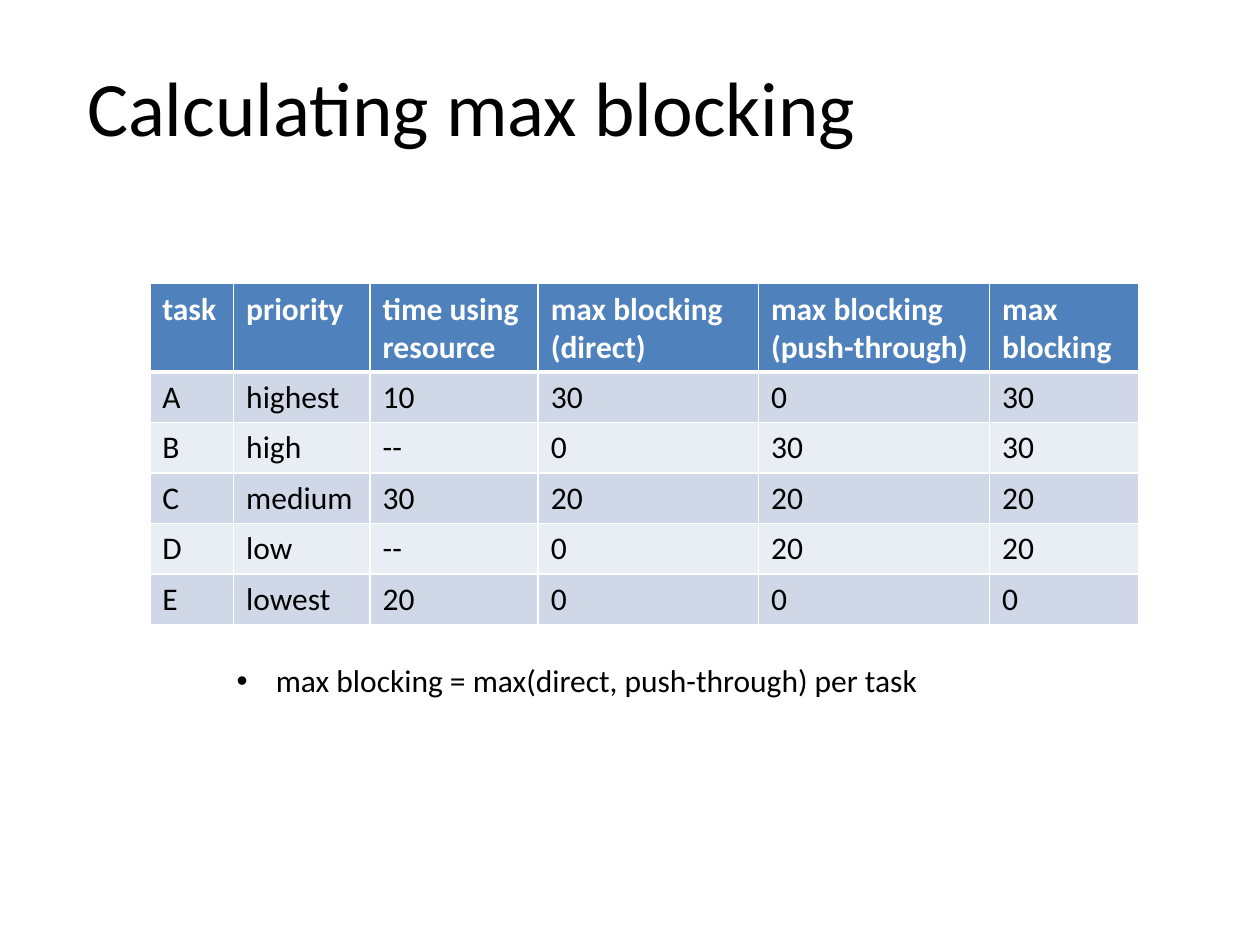
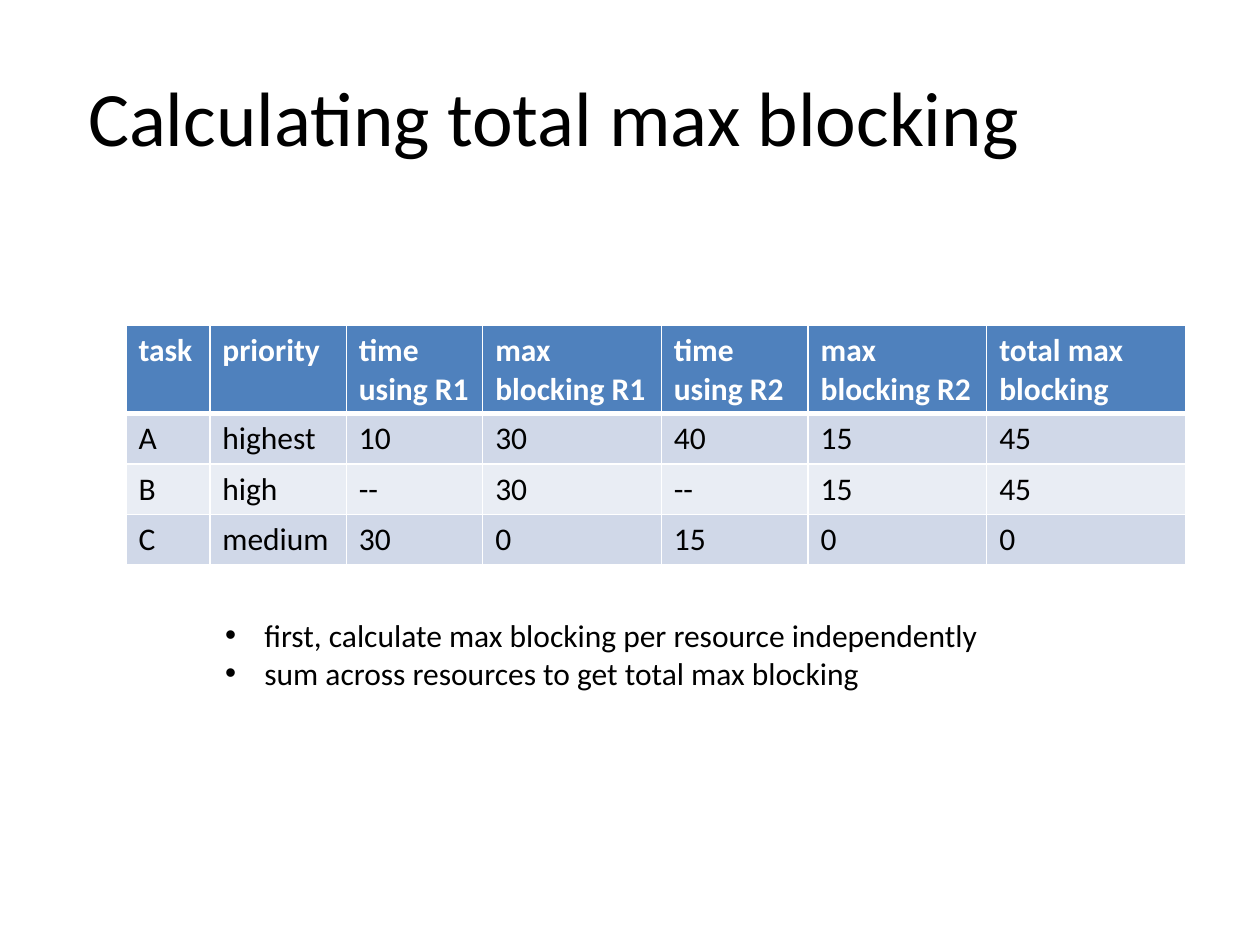
import pptx
import pptx.dml.color
import pptx.enum.text
import pptx.oxml.ns
import pptx.util
from lxml import etree

Cm = pptx.util.Cm
Pt = pptx.util.Pt
qn = pptx.oxml.ns.qn

FONT = "Calibri"
TITLE_SIZE = 44
BODY_SIZE = 18
HEADER_HEIGHT = 1.75
ROW_HEIGHT = 1.01
BULLET_INDENT = 0.79
COLORS = {
    "text": "000000",
    "header": "4F81BD",
    "header_text": "FFFFFF",
    "odd_row": "D0D8E8",
    "even_row": "E9EDF4",
    "border": "FFFFFF",
}

SLIDES = [
    {
        "title": "Calculating max blocking",
        "title_box": (1.5, 1.07, 16.18, 2.13),
        "table_pos": (3.02, 5.72),
        "col_widths": [1.69, 2.75, 3.39, 4.44, 4.66, 3.0],
        "rows": [
            ["task", "priority", "time using resource", "max blocking (direct)",
             "max blocking (push-through)", "max blocking"],
            ["A", "highest", "10", "30", "0", "30"],
            ["B", "high", "--", "0", "30", "30"],
            ["C", "medium", "30", "20", "20", "20"],
            ["D", "low", "--", "0", "20", "20"],
            ["E", "lowest", "20", "0", "0", "0"],
        ],
        "notes_box": (4.52, 13.21, 15.37, 1.02),
        "bullets": ["max blocking = max(direct, push-through) per task"],
    },
    {
        "title": "Calculating total max blocking",
        "title_box": (1.52, 1.27, 19.51, 2.13),
        "table_pos": (2.54, 6.56),
        "col_widths": [1.69, 2.75, 2.75, 3.6, 2.96, 3.6, 4.02],
        "rows": [
            ["task", "priority", "time using R1", "max blocking R1",
             "time using R2", "max blocking R2", "total max blocking"],
            ["A", "highest", "10", "30", "40", "15", "45"],
            ["B", "high", "--", "30", "--", "15", "45"],
            ["C", "medium", "30", "0", "15", "0", "0"],
        ],
        "notes_box": (4.29, 12.29, 16.71, 1.8),
        "bullets": ["first, calculate max blocking per resource independently",
                    "sum across resources to get total max blocking"],
    },
]


def rgb(name):
    return pptx.dml.color.RGBColor.from_string(COLORS[name])


def format_runs(tf, size, color="text", bold=False):
    for p in tf.paragraphs:
        for r in p.runs:
            r.font.name = FONT
            r.font.size = Pt(size)
            r.font.bold = bold
            r.font.color.rgb = rgb(color)


def add_title(s, text, box):
    sp = s.shapes.title
    sp.left, sp.top, sp.width, sp.height = map(Cm, box)
    tf = sp.text_frame
    tf.text = text
    tf.word_wrap = False
    tf.auto_size = pptx.enum.text.MSO_AUTO_SIZE.SHAPE_TO_FIT_TEXT
    tf.vertical_anchor = pptx.enum.text.MSO_ANCHOR.TOP
    tf.paragraphs[0].alignment = pptx.enum.text.PP_ALIGN.LEFT
    format_runs(tf, TITLE_SIZE)


def add_border(cell, side, width):
    ln = etree.SubElement(cell._tc.get_or_add_tcPr(), qn(f"a:ln{side}"), w=str(Pt(width)))
    fill = etree.SubElement(ln, qn("a:solidFill"))
    etree.SubElement(fill, qn("a:srgbClr"), val=COLORS["border"])


def format_cell(cell, row):
    is_header = row == 0
    widths = {"L": 1, "R": 1, "T": 3 if row == 1 else 1, "B": 3 if is_header else 1}
    for side, width in widths.items():
        add_border(cell, side, width)
    cell.fill.solid()
    fill = "header" if is_header else "odd_row" if row % 2 else "even_row"
    cell.fill.fore_color.rgb = rgb(fill)
    format_runs(cell.text_frame, BODY_SIZE, "header_text" if is_header else "text", is_header)


def add_blocking_table(s, pos, col_widths, rows):
    left, top = pos
    heights = [HEADER_HEIGHT] + [ROW_HEIGHT] * (len(rows) - 1)
    table = s.shapes.add_table(len(rows), len(col_widths), Cm(left), Cm(top),
                               Cm(sum(col_widths)), Cm(sum(heights))).table
    for column, width in zip(table.columns, col_widths):
        column.width = Cm(width)
    for i, values in enumerate(rows):
        table.rows[i].height = Cm(heights[i])
        for j, value in enumerate(values):
            cell = table.cell(i, j)
            cell.text_frame.text = value
            format_cell(cell, i)


def add_bullets(s, lines, box):
    tf = s.shapes.add_textbox(*map(Cm, box)).text_frame
    tf.word_wrap = True
    tf.auto_size = pptx.enum.text.MSO_AUTO_SIZE.SHAPE_TO_FIT_TEXT
    tf.text = "\n".join(lines)
    for p in tf.paragraphs:
        pPr = p._p.get_or_add_pPr()
        pPr.set("marL", str(Cm(BULLET_INDENT)))
        pPr.set("indent", str(-Cm(BULLET_INDENT)))
        etree.SubElement(pPr, qn("a:buFont"), typeface="Arial")
        etree.SubElement(pPr, qn("a:buChar"), char="•")
    format_runs(tf, BODY_SIZE)


def add_blocking_slide(prs, content):
    s = prs.slides.add_slide(prs.slide_layouts[5])
    add_title(s, content["title"], content["title_box"])
    add_blocking_table(s, content["table_pos"], content["col_widths"], content["rows"])
    add_bullets(s, content["bullets"], content["notes_box"])


def main():
    prs = pptx.Presentation()
    prs.slide_width, prs.slide_height = Cm(25.4), Cm(19.05)
    for content in SLIDES:
        add_blocking_slide(prs, content)
    prs.save("out.pptx")


if __name__ == "__main__":
    main()
